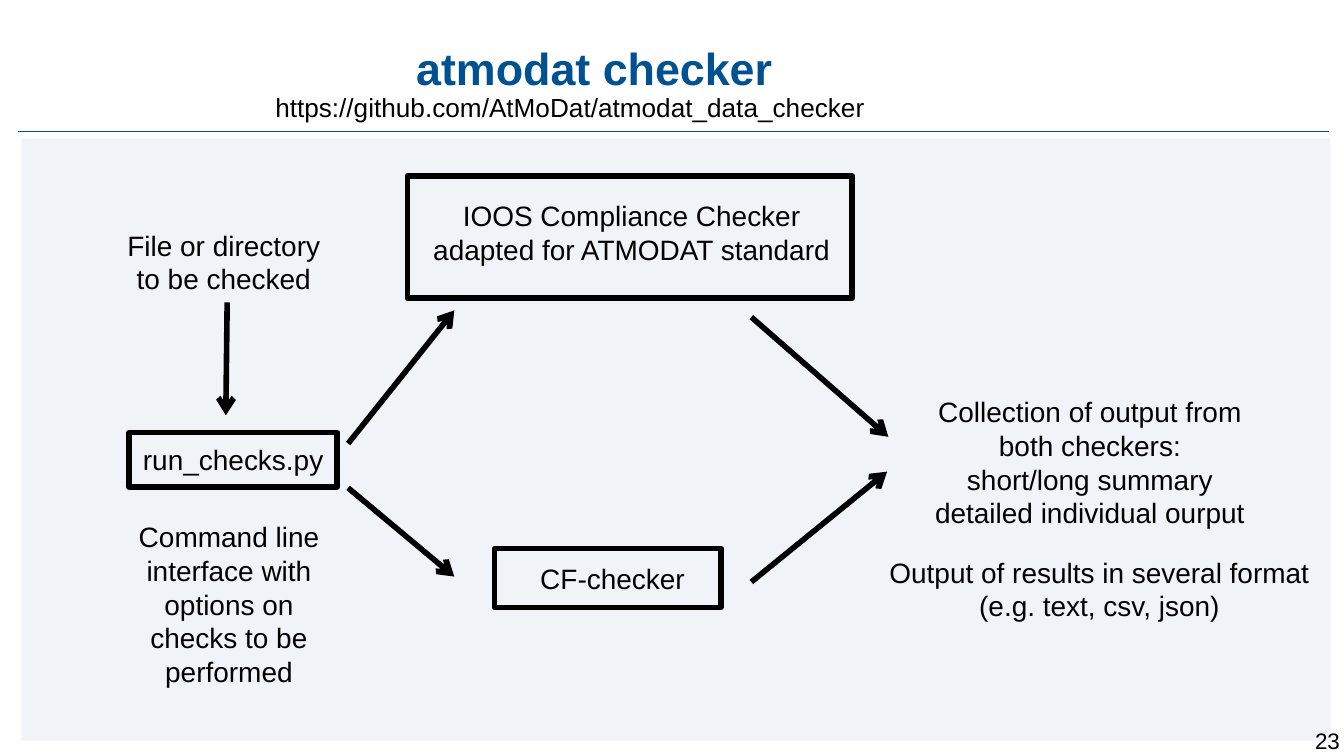
from lxml.etree import SubElement
from pptx import Presentation
from pptx.dml.color import RGBColor
from pptx.enum.shapes import MSO_CONNECTOR, MSO_SHAPE
from pptx.enum.text import MSO_ANCHOR, PP_ALIGN
from pptx.oxml.ns import qn
from pptx.util import Pt

BLACK = RGBColor(0x00, 0x00, 0x00)
BLUE = RGBColor(0x00, 0x51, 0x91)


class Flow:
    """Draws the elements of a flow diagram on one slide, in points."""

    def __init__(self, slide, font="Arial", size=15, weight=3):
        self.slide, self.font, self.size, self.weight = slide, font, size, weight

    def add_runs(self, tf, paragraphs, align=PP_ALIGN.CENTER, size=None, color=BLACK, bold=False, spacing=None):
        for i, text in enumerate(paragraphs):
            p = tf.paragraphs[0] if i == 0 else tf.add_paragraph()
            p.alignment = align
            if spacing:
                p.line_spacing = spacing
            for j, line in enumerate(text.split("\n")):
                if j:
                    p.add_line_break()
                r = p.add_run()
                r.text = line
                r.font.name = self.font
                r.font.size = Pt(size or self.size)
                r.font.bold = bold
                r.font.color.rgb = color

    def text(self, x, y, w, h, *paragraphs, inset=True, wrap=True, anchor=MSO_ANCHOR.TOP, **style):
        tf = self.slide.shapes.add_textbox(Pt(x), Pt(y), Pt(w), Pt(h)).text_frame
        tf.word_wrap = wrap
        tf.vertical_anchor = anchor
        if not inset:
            tf.margin_left = tf.margin_right = tf.margin_top = tf.margin_bottom = 0
        self.add_runs(tf, paragraphs, **style)

    def rectangle(self, x, y, w, h):
        sp = self.slide.shapes.add_shape(MSO_SHAPE.RECTANGLE, Pt(x), Pt(y), Pt(w), Pt(h))
        sp.shadow.inherit = False
        return sp

    def panel(self, x, y, w, h, color, opacity):
        sp = self.rectangle(x, y, w, h)
        sp.fill.solid()
        sp.fill.fore_color.rgb = color
        sp.line.fill.background()
        rgb = sp._element.spPr.find(qn("a:solidFill")).find(qn("a:srgbClr"))
        SubElement(rgb, qn("a:alpha")).set("val", str(opacity * 1000))

    def box(self, x, y, w, h, text, left=0, bottom=0):
        sp = self.rectangle(x, y, w, h)
        sp.fill.background()
        sp.line.color.rgb = BLACK
        sp.line.width = Pt(self.weight)
        tf = sp.text_frame
        tf.word_wrap = True
        tf.vertical_anchor = MSO_ANCHOR.MIDDLE
        tf.margin_left, tf.margin_right = Pt(left), 0
        tf.margin_top, tf.margin_bottom = 0, Pt(bottom)
        self.add_runs(tf, [text])

    def line(self, x1, y1, x2, y2, color=BLACK, weight=None, arrow=True):
        c = self.slide.shapes.add_connector(MSO_CONNECTOR.STRAIGHT, Pt(x1), Pt(y1), Pt(x2), Pt(y2))
        c.line.color.rgb = color
        c.line.width = Pt(weight or self.weight)
        if arrow:
            SubElement(c._element.spPr.find(qn("a:ln")), qn("a:tailEnd")).set("type", "arrow")
        SubElement(c._element.spPr, qn("a:effectLst"))


def main():
    prs = Presentation()
    prs.slide_width, prs.slide_height = Pt(720), Pt(405)
    s = Flow(prs.slides.add_slide(prs.slide_layouts[6]))

    s.panel(11.5, 74.2, 701.3, 322.6, BLUE, 6)
    s.line(712.1, 70.6, 9.4, 70.6, color=BLUE, weight=0.75, arrow=False)
    s.text(688.3, 389.5, 29.5, 21.6, "23", inset=False, align=PP_ALIGN.RIGHT, size=12)
    s.text(9.4, 7.2, 617.8, 54, "atmodat checker", inset=False, anchor=MSO_ANCHOR.MIDDLE,
           size=24, color=BLUE, bold=True, spacing=1.13)
    s.text(140.4, 45.4, 341.3, 24.5, "https://github.com/AtMoDat/atmodat_data_checker",
           align=PP_ALIGN.LEFT, size=14)

    s.box(69.1, 231.8, 111.6, 29, "run_checks.py")
    s.box(218.2, 94.3, 238.3, 65.5, "IOOS Compliance Checker\nadapted for ATMODAT standard", left=2, bottom=5)
    s.box(265, 293.8, 121.3, 31.7, "CF-checker", left=5)

    s.text(60.5, 118.8, 118.8, 41.8, "File or directory\nto be checked", wrap=False)
    s.text(66.2, 275, 113, 94.3, "Command line interface with options on checks to be performed")
    s.text(483.1, 208.1, 201.6, 77, "Collection of output from both checkers:",
           "short/long summary\ndetailed individual ourput")
    s.text(462.2, 293.8, 257.8, 79.9, "Output of results in several format\u00a0", "(e.g. text, csv, json)\u00a0")

    for ends in [
        (121.7, 162, 121, 222.5),
        (186.5, 237.6, 243.4, 166.3),
        (186.5, 261.4, 243.4, 308.9),
        (402.5, 169.9, 475.9, 234),
        (402.5, 311.8, 475.2, 252.7),
    ]:
        s.line(*ends)

    prs.save("out.pptx")


if __name__ == "__main__":
    main()
